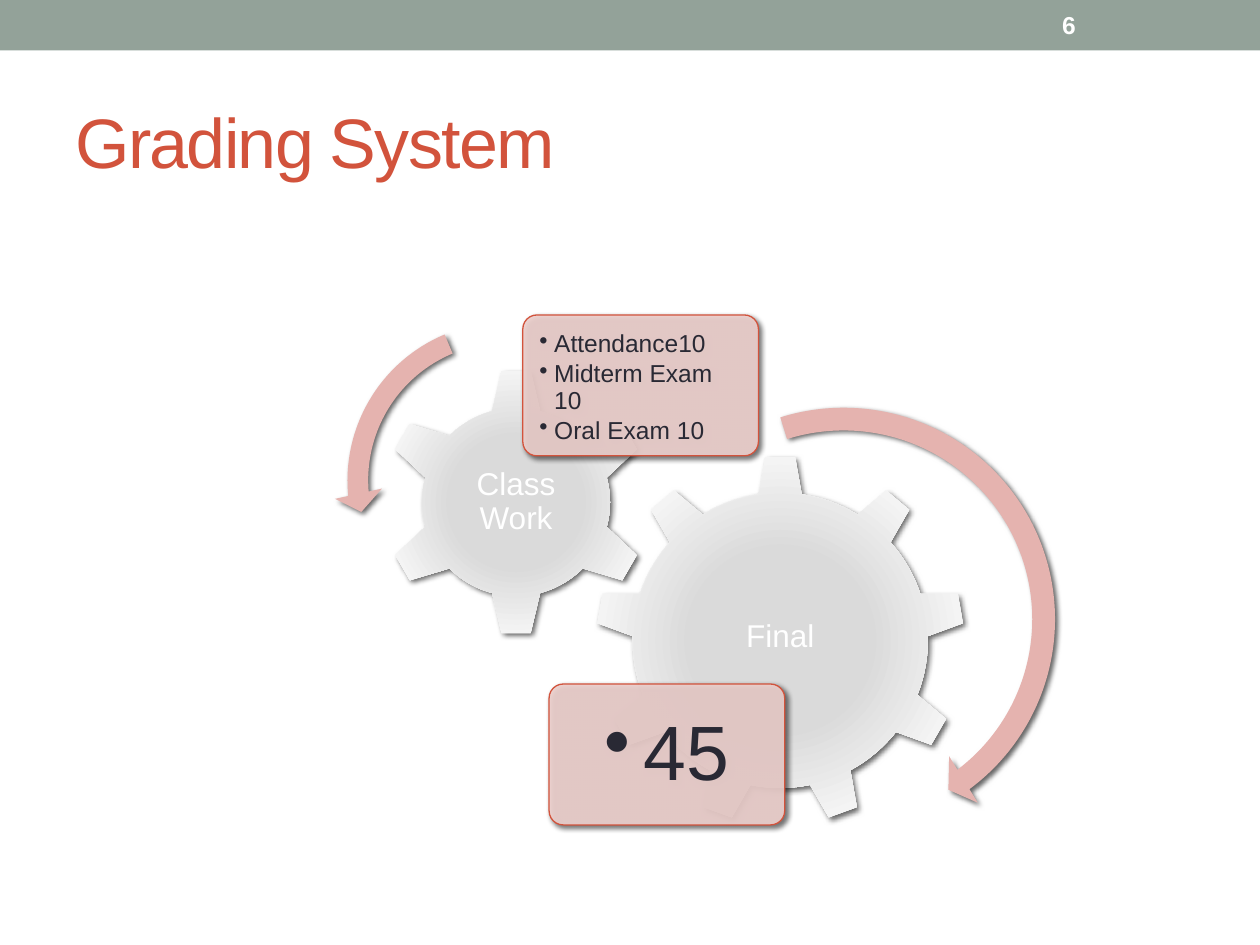
from lxml import etree
from pptx import Presentation
from pptx.dml.color import RGBColor
from pptx.enum.shapes import MSO_SHAPE as Shape
from pptx.enum.text import MSO_ANCHOR as Anchor, MSO_AUTO_SIZE as AutoSize, PP_ALIGN as Align
from pptx.oxml import parse_xml
from pptx.oxml.ns import qn
from pptx.util import Cm, Pt

# Content: places are left, top, width, height in cm
TITLE = "Grading System"
PAGE_NUMBER = "6"
GEARS = [
    dict(kind=Shape.GEAR_9, place=(12.01, 9.19, 7.44, 7.44), label="Final",
         card=dict(place=(11.07, 13.79, 4.75, 2.84), items=["45"], size=44,
                   inset=0.53, indent=0.79, align=Align.CENTER)),
    dict(kind=Shape.GEAR_6, place=(7.7, 7.42, 5.41, 5.41), label="Class Work",
         card=dict(place=(10.54, 6.35, 4.75, 2.84),
                   items=["Attendance10", "Midterm Exam 10", "Oral Exam 10"], size=14,
                   inset=0.25, indent=0.3, align=Align.LEFT)),
]
ARROWS = [
    (Shape.CIRCULAR_ARROW, (12.42, 7.9, 9.17, 9.17),
     (0.05, 3.13, 31.91, 151.57, 0.06)),
    (Shape.LEFT_CIRCULAR_ARROW, (6.73, 6.22, 6.93, 6.93),
     (0.06, 4.3, 104.89, 148.38, 0.07)),
]

FONT = "Arial"
BAND, RED, PINK, CARD = "93A299", "D2533C", "E5B3AF", "EED1CE"
INK, WHITE = "292934", "FFFFFF"
GEAR_STOPS = [(0, "DADADA"), (34, "DADADA"), (70, "F4F4F4"), (100, "FFFFFF")]
NAMESPACE = 'xmlns:a="http://schemas.openxmlformats.org/drawingml/2006/main"'


def color(hex_text):
    return RGBColor.from_string(hex_text)


def add_shape(kind, place, fill=None, line=None):
    shape = slide.shapes.add_shape(kind, *map(Cm, place))
    shape.shadow.inherit = False
    if fill:
        shape.fill.solid()
        shape.fill.fore_color.rgb = color(fill)
    if line:
        shape.line.color.rgb = color(line)
        shape.line.width = Pt(0.75)
    else:
        shape.line.fill.background()
    return shape


def add_shadow(shape):
    effects = shape._element.spPr.find(qn("a:effectLst"))
    effects.append(parse_xml(
        f'<a:outerShdw {NAMESPACE} blurRad="{Pt(3)}" dist="{Pt(2)}" dir="2700000" '
        'algn="tl" rotWithShape="0"><a:srgbClr val="000000"><a:alpha val="60000"/>'
        '</a:srgbClr></a:outerShdw>'))


def fill_radial(shape, stops):
    stop_xml = "".join(f'<a:gs pos="{position * 1000}"><a:srgbClr val="{value}"/></a:gs>'
                       for position, value in stops)
    shape._element.spPr.find(qn("a:prstGeom")).addnext(parse_xml(
        f'<a:gradFill {NAMESPACE} rotWithShape="1"><a:gsLst>{stop_xml}</a:gsLst>'
        '<a:path path="circle"><a:fillToRect l="100000" t="100000" r="100000" b="100000"/>'
        '</a:path></a:gradFill>'))


def set_text(shape, lines, size, hex_text, align=Align.LEFT, anchor=Anchor.MIDDLE,
             inset=None, bold=False, line_spacing=None, space_after=None):
    frame = shape.text_frame
    frame.text = "\n".join(lines)
    frame.word_wrap = True
    frame.auto_size = AutoSize.NONE
    frame.vertical_anchor = anchor
    if inset is not None:
        frame.margin_left = frame.margin_right = Cm(inset)
        frame.margin_top = frame.margin_bottom = Cm(inset)
    for paragraph in frame.paragraphs:
        paragraph.alignment = align
        paragraph.line_spacing = line_spacing
        paragraph.space_after = space_after
        for run in paragraph.runs:
            run.font.name = FONT
            run.font.size = Pt(size)
            run.font.bold = bold
            run.font.color.rgb = color(hex_text)
    return frame


def add_bullets(frame, indent):
    for paragraph in frame.paragraphs:
        properties = paragraph._p.get_or_add_pPr()
        properties.set("marL", str(Cm(indent)))
        properties.set("indent", str(-Cm(indent)))
        etree.SubElement(properties, qn("a:buChar")).set("char", "•")


def add_gear(kind, place, label, card):
    gear = add_shape(kind, place)
    fill_radial(gear, GEAR_STOPS)
    add_shadow(gear)
    set_text(gear, [label], 18, WHITE, Align.CENTER, inset=0.08,
             line_spacing=0.9, space_after=Pt(6))

    box = add_shape(Shape.ROUNDED_RECTANGLE, card["place"], CARD, RED)
    box.adjustments[0] = 0.1
    box_color = box._element.spPr.find(qn("a:solidFill"))[0]
    etree.SubElement(box_color, qn("a:alpha")).set("val", "90000")
    add_shadow(box)
    frame = set_text(box, card["items"], card["size"], INK, card["align"], Anchor.TOP,
                     card["inset"], line_spacing=0.9, space_after=Pt(card["size"] * 0.15))
    add_bullets(frame, card["indent"])


presentation = Presentation()
presentation.slide_width, presentation.slide_height = Cm(25.4), Cm(19.05)
slide = presentation.slides.add_slide(presentation.slide_layouts[5])

# Top band and page number
add_shape(Shape.RECTANGLE, (0, 0, 25.4, 1.02), BAND)
number = slide.shapes.add_textbox(Cm(21.16), Cm(0.05), Cm(2.97), Cm(0.91))
set_text(number, [PAGE_NUMBER], 14, WHITE, bold=True)

# Title
title = slide.shapes.title
title.left, title.top, title.width, title.height = map(Cm, (1.27, 1.47, 22.86, 2.74))
title_frame = set_text(title, [TITLE], 40, RED)
title_frame.paragraphs[0].runs[0].font._element.set("spc", "-100")

# Gears with their cards
for gear_content in GEARS:
    add_gear(**gear_content)

# Turning arrows
for kind, place, adjustments in ARROWS:
    arrow = add_shape(kind, place, PINK)
    for index, value in enumerate(adjustments):
        arrow.adjustments[index] = value
    add_shadow(arrow)

presentation.save("out.pptx")
